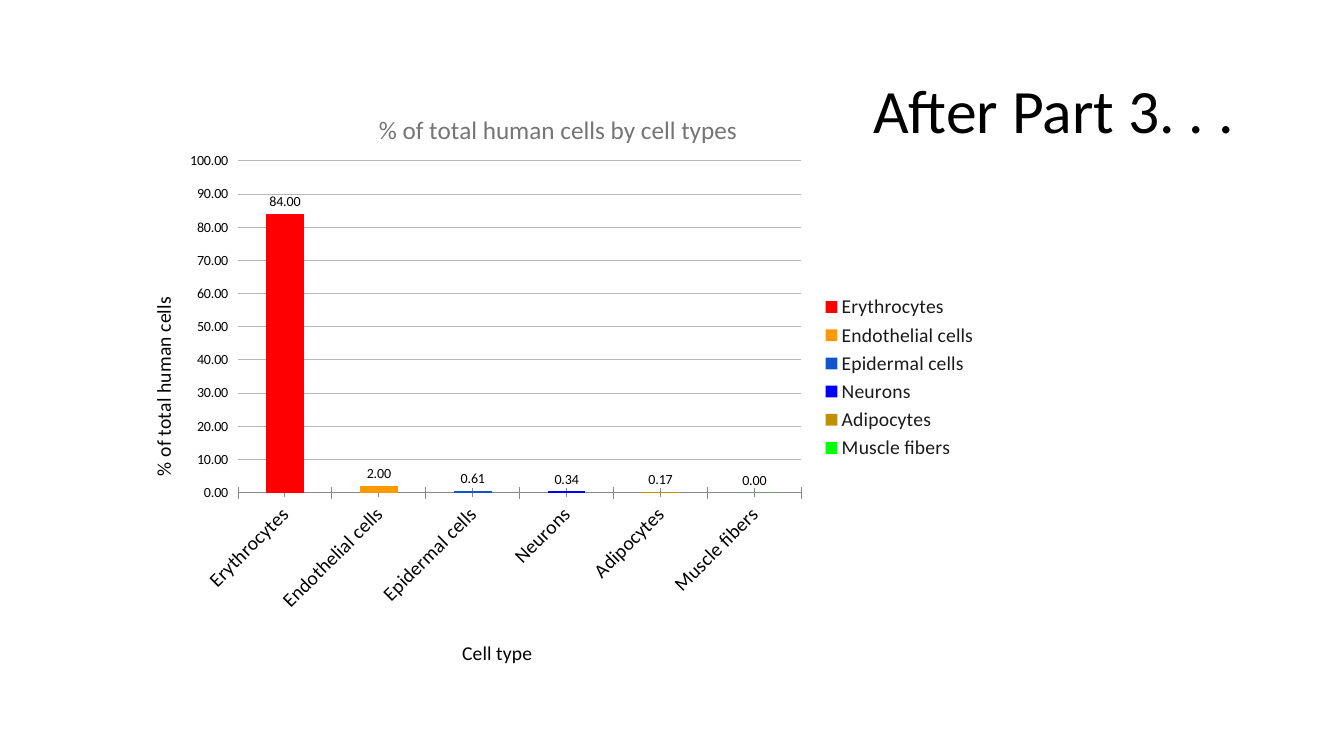
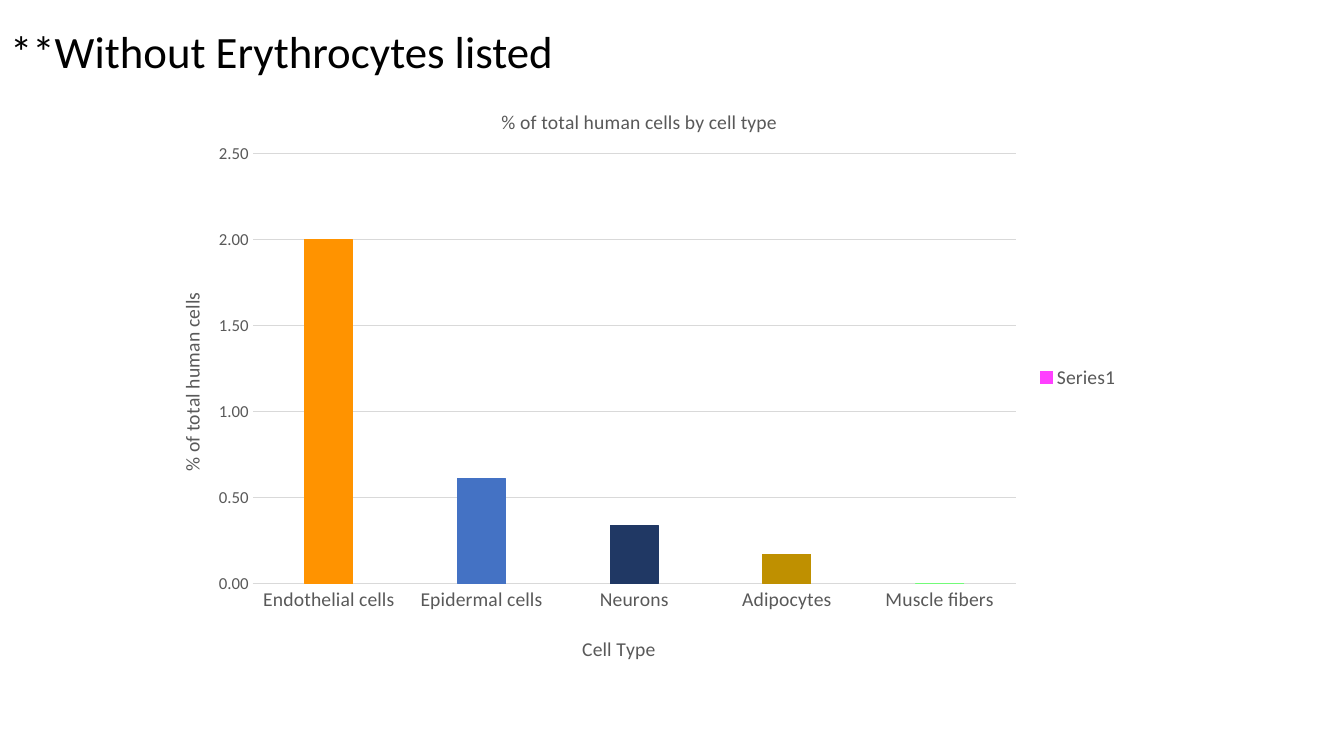
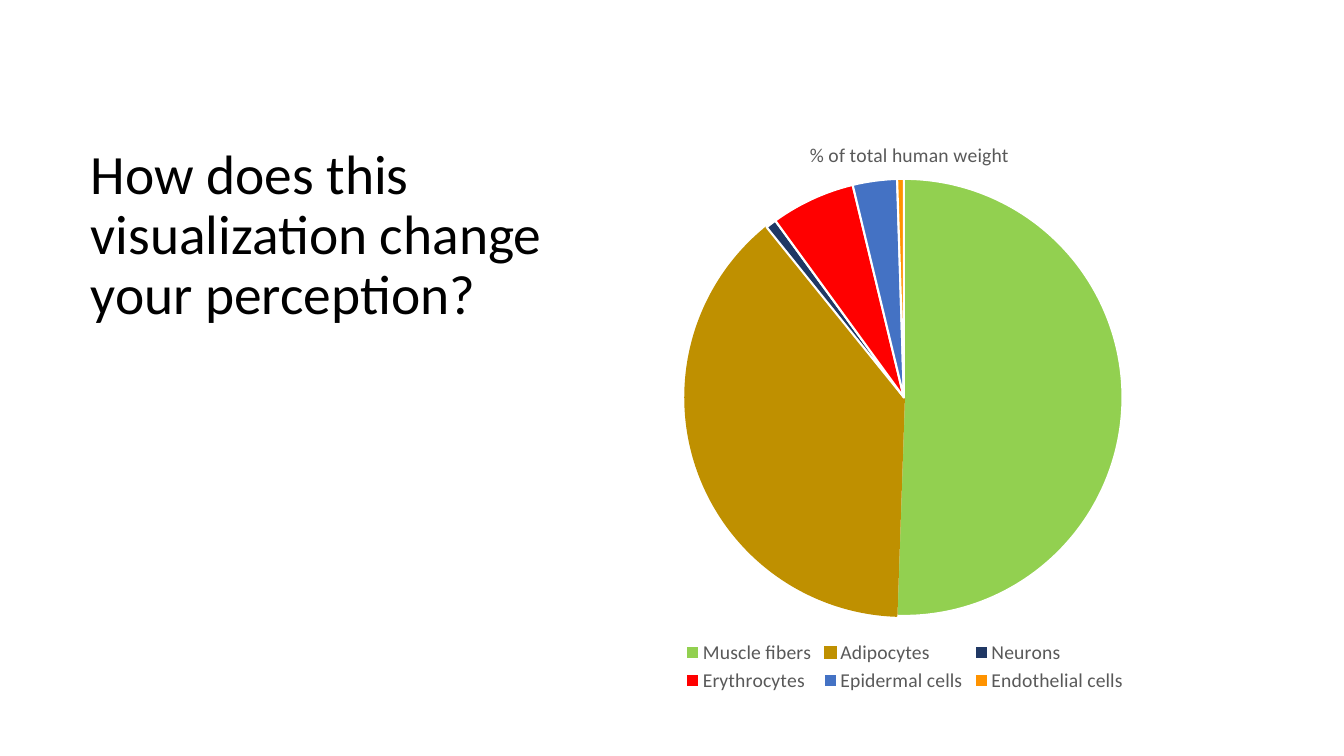
from dataclasses import dataclass

from pptx import Presentation
from pptx.chart.data import CategoryChartData
from pptx.dml.color import RGBColor
from pptx.enum.chart import (XL_CHART_TYPE as ChartType, XL_LABEL_POSITION as LabelPos,
                             XL_LEGEND_POSITION as LegendPos, XL_TICK_MARK as Tick)
from pptx.enum.text import MSO_ANCHOR, MSO_AUTO_SIZE, PP_ALIGN
from pptx.oxml import parse_xml
from pptx.oxml.ns import nsdecls, qn
from pptx.util import Inches, Pt


@dataclass(frozen=True)
class Theme:
    font: str = "Calibri"
    ink: str = "000000"
    legend_ink: str = "1A1A1A"
    muted: str = "595959"
    heading: str = "757575"
    axis: str = "888888"
    grid: str = "B7B7B7"
    light_grid: str = "D9D9D9"
    white: str = "FFFFFF"
    red: str = "FF0000"
    gold: str = "BF9000"
    orange: str = "FF9300"
    blue: str = "4472C4"
    navy: str = "203864"
    pink: str = "FF40FF"
    small: float = 10
    tick: float = 12
    label: float = 14
    chart_title: float = 18


T = Theme()


def style_font(font, size, color):
    font.name, font.size, font.bold = T.font, Pt(size), False
    font.color.rgb = RGBColor.from_string(color)


def style_line(line, color, width=0.75):
    line.color.rgb = RGBColor.from_string(color)
    line.width = Pt(width)


def set_fill(fmt, color):
    fmt.fill.solid()
    fmt.fill.fore_color.rgb = RGBColor.from_string(color)


def set_layout(parent, x, y, w=None, h=None):
    """Place a chart title, or the inner plot area when w and h are given, in chart fractions."""
    for old in parent.findall(qn("c:layout")):
        parent.remove(old)
    target = '<c:layoutTarget val="inner"/>' if w else ""
    modes = '<c:xMode val="edge"/><c:yMode val="edge"/>'
    places = "".join(f'<c:{k} val="{v}"/>' for k, v in zip("xywh", (x, y, w, h)) if v is not None)
    layout = parse_xml(f'<c:layout {nsdecls("c")}><c:manualLayout>{target}{modes}{places}'
                       '</c:manualLayout></c:layout>')
    tx = parent.find(qn("c:tx"))
    parent.insert(0 if tx is None else parent.index(tx) + 1, layout)


class Deck:
    def __init__(self):
        self.prs = Presentation()
        self.prs.slide_width, self.prs.slide_height = Inches(13.33), Inches(7.5)
        self.s = None

    def slide(self, title, box, size, bottom=0.05):
        self.s = self.prs.slides.add_slide(self.prs.slide_layouts[5])
        sp = self.s.shapes.title
        sp.left, sp.top, sp.width, sp.height = map(Inches, box)
        tf = sp.text_frame
        tf.word_wrap, tf.auto_size = True, MSO_AUTO_SIZE.NONE
        tf.vertical_anchor, tf.margin_bottom = MSO_ANCHOR.MIDDLE, Inches(bottom)
        p = tf.paragraphs[0]
        p.alignment, p.line_spacing = PP_ALIGN.LEFT, 0.9
        r = p.add_run()
        r.text = title
        style_font(r.font, size, T.ink)

    def chart(self, kind, box, name, points, plot):
        """Add a one-series chart; points are (category, value, fill, outline or None)."""
        data = CategoryChartData(number_format="#,##0.00")
        data.categories = [point[0] for point in points]
        data.add_series(name, [point[1] for point in points])
        chart = self.s.shapes.add_chart(kind, *map(Inches, box), data).chart
        style_font(chart.font, T.small, T.ink)
        series = chart.plots[0].series[0]
        for i, (_, _, fill, outline) in enumerate(points):
            fmt = series.points[i].format
            set_fill(fmt, fill)
            if outline:
                style_line(fmt.line, outline, 1.5 if kind == ChartType.PIE else 0.75)
        set_layout(chart.element.xpath("c:chart/c:plotArea")[0], *plot)
        return chart

    def heading(self, owner, text, size, color, at):
        """Title a chart or an axis."""
        owner.has_title = True
        title = owner.chart_title if hasattr(owner, "chart_title") else owner.axis_title
        r = title.text_frame.paragraphs[0].add_run()
        r.text = text
        style_font(r.font, size, color)
        set_layout(title._element, *at)

    def legend(self, chart, position, color):
        chart.has_legend = True
        chart.legend.position = position
        chart.legend.include_in_layout = False
        style_font(chart.legend.font, T.label, color)

    def axes(self, chart, color, tick, value_size, axis_line, grid, top, step):
        cat, val = chart.category_axis, chart.value_axis
        for axis, size in ((cat, T.label), (val, value_size)):
            axis.major_tick_mark = axis.minor_tick_mark = tick
            style_font(axis.tick_labels.font, size, color)
        style_line(cat.format.line, axis_line)
        val.format.line.fill.background()
        val.has_major_gridlines = True
        style_line(val.major_gridlines.format.line, grid)
        val.minimum_scale, val.maximum_scale, val.major_unit = 0, top, step
        val.tick_labels.number_format = "#,##0.00"
        val.tick_labels.number_format_is_linked = False

    def value_labels(self, plot):
        plot.has_data_labels = True
        labels = plot.data_labels
        labels.show_value, labels.position = True, LabelPos.OUTSIDE_END
        labels.number_format, labels.number_format_is_linked = "#,##0.00", False
        style_font(labels.font, T.small, T.ink)


def all_cells(d):
    d.slide("After Part 3. . .", (8.56, 0.4, 3.86, 1.45), 44)
    points = [("Erythrocytes", 84, T.red, None), ("Endothelial cells", 2, "FF9900", None),
              ("Epidermal cells", 0.61, "1155CC", None), ("Neurons", 0.34, "0000FF", None),
              ("Adipocytes", 0.17, T.gold, None), ("Muscle fibers", 0, "00FF00", None)]
    chart = d.chart(ChartType.COLUMN_CLUSTERED, (1.19, 0.77, 8.61, 5.95),
                    "% of total human cell #", points, (0.136, 0.139, 0.649, 0.553))
    plot = chart.plots[0]
    plot.vary_by_categories, plot.gap_width = True, 150
    set_fill(plot.series[0].format, "4285F4")
    d.value_labels(plot)
    d.axes(chart, T.ink, Tick.CROSS, T.small, T.axis, T.grid, 100, 10)
    chart.value_axis.minor_tick_mark = Tick.NONE
    chart.element.xpath(".//c:catAx/c:txPr/a:bodyPr")[0].set("rot", "-2700000")
    d.heading(chart, "% of total human cells by cell types", T.chart_title, T.heading, (0.293, 0.05))
    d.heading(chart.category_axis, "Cell type", T.label, T.ink, (0.39, 0.93))
    d.heading(chart.value_axis, "% of total human cells", T.label, T.ink, (0.03, 0.36))
    d.legend(chart, LegendPos.RIGHT, T.legend_ink)


def without_erythrocytes(d):
    d.slide("**Without Erythrocytes listed", (0, 0.06, 6.12, 1.45), 32, bottom=0.54)
    cells = [("Endothelial cells", 2, T.orange), ("Epidermal cells", 0.61, T.blue),
             ("Neurons", 0.34, T.navy), ("Adipocytes", 0.17, T.gold),
             ("Muscle fibers", 0, "73FB79")]
    chart = d.chart(ChartType.COLUMN_CLUSTERED, (1.44, 0.78, 9.77, 5.93), "Series1",
                    [(*cell, cell[2]) for cell in cells], (0.109, 0.126, 0.775, 0.719))
    plot = chart.plots[0]
    plot.vary_by_categories, plot.gap_width, plot.overlap = False, 219, -27
    set_fill(plot.series[0].format, T.pink)
    style_line(plot.series[0].format.line, T.pink)
    d.axes(chart, T.muted, Tick.NONE, T.tick, T.light_grid, T.light_grid, 2.5, 0.5)
    d.heading(chart, "% of total human cells by cell type", T.label, T.muted, (0.358, 0.044))
    d.heading(chart.category_axis, "Cell Type", T.label, T.muted, (0.44, 0.925))
    d.heading(chart.value_axis, "% of total human cells", T.label, T.muted, (0.03, 0.352))
    d.legend(chart, LegendPos.RIGHT, T.muted)


def weight_shares(d):
    d.slide("How does this visualization change your perception?", (0.8, 1.62, 5.66, 1.45), 39.6)
    points = [("Muscle fibers", 51, "92D050", T.white), ("Adipocytes", 39, T.gold, T.gold),
              ("Neurons", 0.8, T.navy, T.white), ("Erythrocytes", 6.3, T.red, T.white),
              ("Epidermal cells", 3.3, T.blue, T.white),
              ("Endothelial cells", 0.5, T.orange, T.white)]
    chart = d.chart(ChartType.PIE, (5.86, 1.12, 6.23, 5.79), "Series 1", points,
                    (0.15, 0.113, 0.697, 0.749))
    chart.plots[0].vary_by_categories = True
    d.heading(chart, "% of total human weight", T.label, T.muted, (0.343, 0.043))
    d.legend(chart, LegendPos.BOTTOM, T.muted)


def main():
    d = Deck()
    for build in (all_cells, without_erythrocytes, weight_shares):
        build(d)
    d.prs.save("out.pptx")


if __name__ == "__main__":
    main()
